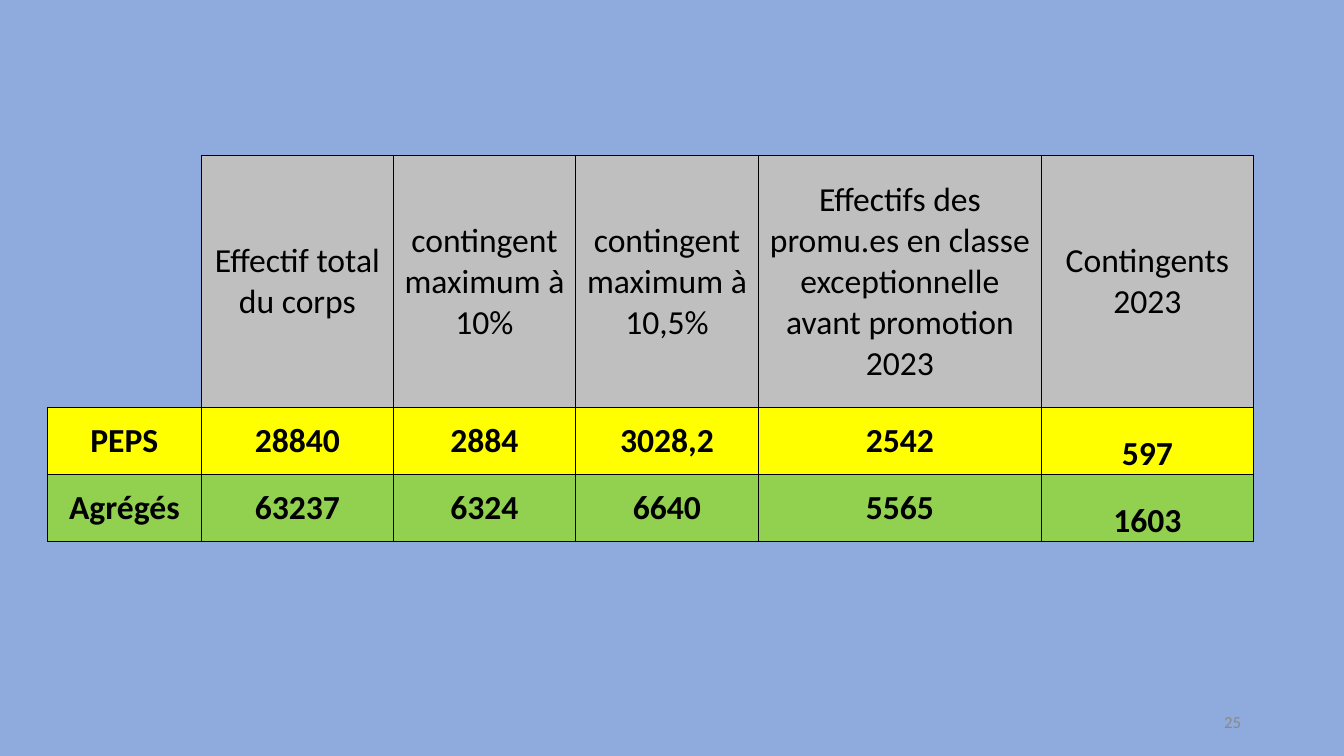
from lxml import etree
from pptx import Presentation
from pptx.dml.color import RGBColor
from pptx.enum import text
from pptx.oxml import ns
from pptx.util import Cm, Pt

HEADERS = ["", "Effectif total du corps", "contingent maximum à 10%",
           "contingent maximum à 10,5%",
           "Effectifs des promu.es en classe exceptionnelle avant promotion 2023",
           "Contingents 2023"]
PEPS = ["PEPS", "28840", "2884", "3028,2", "2542", "597"]
AGREGES = ["Agrégés", "63237", "6324", "6640", "5565", "1603"]
ROWS = [(HEADERS, "BFBFBF", 6.35), (PEPS, "FFFF00", 1.69), (AGREGES, "92D050", 1.69)]
COL_WIDTHS = [3.89, 4.83, 4.6, 4.6, 7.14, 5.33]


def rgb(value):
    return RGBColor.from_string(value)


def style_paragraph(p, size, color, align, bold=False):
    p.alignment = align
    p.font.name = "Calibri"
    p.font.size = Pt(size)
    p.font.bold = bold
    p.font.color.rgb = rgb(color)


def set_borders(cell, hidden=()):
    tc_pr = cell._tc.get_or_add_tcPr()
    for side in "LRTB":
        ln = etree.SubElement(tc_pr, ns.qn(f"a:ln{side}"), w=str(Pt(0.5)))
        if side in hidden:
            etree.SubElement(ln, ns.qn("a:noFill"))
        else:
            fill = etree.SubElement(ln, ns.qn("a:solidFill"))
            etree.SubElement(fill, ns.qn("a:srgbClr"), val="000000")


def fill_cell(cell, content, color, bold, anchor):
    cell.margin_left = cell.margin_right = cell.margin_top = Cm(0.03)
    cell.margin_bottom = 0
    cell.vertical_anchor = anchor
    set_borders(cell, hidden="" if content else "LT")
    if not content:
        cell.fill.background()
        return
    cell.fill.solid()
    cell.fill.fore_color.rgb = rgb(color)
    cell.text = content
    style_paragraph(cell.text_frame.paragraphs[0], 24, "000000",
                    text.PP_ALIGN.CENTER, bold)


def add_quota_table(slide):
    frame = slide.shapes.add_table(len(ROWS), len(COL_WIDTHS), Cm(1.19), Cm(3.91),
                                   Cm(sum(COL_WIDTHS)), Cm(sum(row[2] for row in ROWS)))
    table = frame.table
    table.first_row = table.horz_banding = False
    for column, width in zip(table.columns, COL_WIDTHS):
        column.width = Cm(width)
    last = len(COL_WIDTHS) - 1
    for i, (contents, color, height) in enumerate(ROWS):
        table.rows[i].height = Cm(height)
        for j, content in enumerate(contents):
            low = i > 0 and j == last
            anchor = text.MSO_ANCHOR.BOTTOM if low else text.MSO_ANCHOR.MIDDLE
            fill_cell(table.cell(i, j), content, color, i > 0, anchor)


def add_page_number(slide, number):
    sp = slide.shapes.add_textbox(Cm(23.91), Cm(17.68), Cm(7.62), Cm(1.01))
    tf = sp.text_frame
    tf.word_wrap = True
    tf.vertical_anchor = text.MSO_ANCHOR.MIDDLE
    p = tf.paragraphs[0]
    p.text = number
    style_paragraph(p, 12, "898989", text.PP_ALIGN.RIGHT)


def main():
    prs = Presentation()
    prs.slide_width, prs.slide_height = Cm(33.87), Cm(19.05)
    slide = prs.slides.add_slide(prs.slide_layouts[6])
    slide.background.fill.solid()
    slide.background.fill.fore_color.rgb = rgb("8FAADC")
    add_quota_table(slide)
    add_page_number(slide, "25")
    prs.save("out.pptx")


if __name__ == "__main__":
    main()
